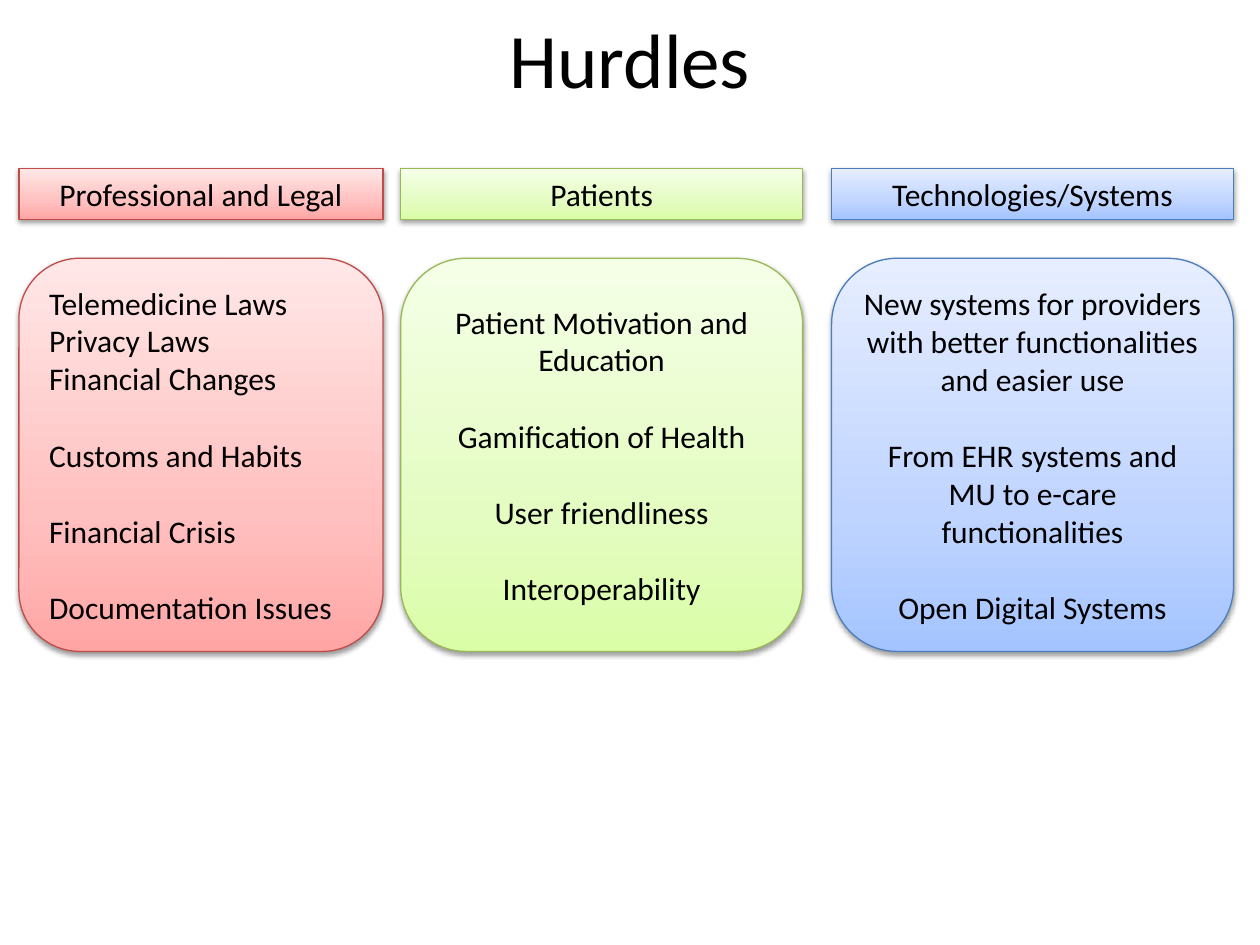
from copy import deepcopy
from dataclasses import dataclass

from lxml import etree
from pptx import Presentation
from pptx.dml.color import RGBColor
from pptx.enum.shapes import MSO_SHAPE
from pptx.enum.text import MSO_ANCHOR, MSO_AUTO_SIZE, PP_ALIGN
from pptx.oxml.ns import qn
from pptx.shapes.autoshape import Shape
from pptx.slide import Slide
from pptx.util import Inches, Pt

FONT = "Calibri"
BLACK = RGBColor(0x00, 0x00, 0x00)
BODY_SIZE = Pt(18)
TOPIC_GAP = Pt(22)
STOP_POSITIONS = (0, 0.35, 1)
HEADER_TOP, HEADER_HEIGHT = 1.34, 0.4
PANEL_TOP, PANEL_HEIGHT = 2.05, 3.12


@dataclass(frozen=True)
class Palette:
    line: RGBColor
    stops: tuple[RGBColor, RGBColor, RGBColor]


@dataclass(frozen=True)
class Column:
    heading: str
    topics: tuple[tuple[str, ...], ...]
    left: float
    width: float
    palette: Palette
    alignment: PP_ALIGN = PP_ALIGN.CENTER


RED = Palette(
    RGBColor(0xBF, 0x4C, 0x48),
    (RGBColor(0xFF, 0xA6, 0xA5), RGBColor(0xFF, 0xC0, 0xBF), RGBColor(0xFF, 0xE7, 0xE7)),
)
GREEN = Palette(
    RGBColor(0x98, 0xB9, 0x55),
    (RGBColor(0xDA, 0xFD, 0xA7), RGBColor(0xE4, 0xFC, 0xC2), RGBColor(0xF5, 0xFF, 0xE7)),
)
BLUE = Palette(
    RGBColor(0x4B, 0x7E, 0xBC),
    (RGBColor(0xA4, 0xC4, 0xFF), RGBColor(0xBF, 0xD4, 0xFF), RGBColor(0xE6, 0xEE, 0xFF)),
)

COLUMNS = (
    Column(
        "Professional and Legal",
        (
            ("Telemedicine Laws", "Privacy Laws", "Financial Changes"),
            ("Customs and Habits",),
            ("Financial Crisis",),
            ("Documentation Issues",),
        ),
        0.15, 2.89, RED, PP_ALIGN.LEFT,
    ),
    Column(
        "Patients",
        (
            ("Patient Motivation and Education",),
            ("Gamification of Health",),
            ("User friendliness",),
            ("Interoperability",),
        ),
        3.18, 3.19, GREEN,
    ),
    Column(
        "Technologies/Systems",
        (
            ("New systems for providers with better functionalities and easier use",),
            ("From EHR systems and MU to e-care functionalities",),
            ("Open Digital Systems",),
        ),
        6.6, 3.19, BLUE,
    ),
)


def apply_gradient(shape: Shape, palette: Palette) -> None:
    shape.fill.gradient()
    shape.fill.gradient_angle = 90
    stop_list = shape.element.spPr.find(f".//{qn('a:gsLst')}")
    stop_list.insert(1, deepcopy(stop_list[0]))
    for stop, position, color in zip(shape.fill.gradient_stops, STOP_POSITIONS, palette.stops):
        stop.position = position
        stop.color.rgb = color


def apply_shadow(shape: Shape) -> None:
    shape.shadow.inherit = False
    effects = shape.element.spPr.find(qn("a:effectLst"))
    shadow = etree.SubElement(
        effects, qn("a:outerShdw"),
        blurRad=str(Pt(3.1)), dist=str(Pt(1.6)), dir="5400000", rotWithShape="0",
    )
    color = etree.SubElement(shadow, qn("a:srgbClr"), val=str(BLACK))
    etree.SubElement(color, qn("a:alpha"), val="38000")


def add_box(slide: Slide, kind: MSO_SHAPE, column: Column, top: float, height: float) -> Shape:
    shape = slide.shapes.add_shape(
        kind, Inches(column.left), Inches(top), Inches(column.width), Inches(height)
    )
    shape.line.color.rgb = column.palette.line
    shape.line.width = Pt(0.75)
    apply_gradient(shape, column.palette)
    apply_shadow(shape)
    shape.text_frame.word_wrap = True
    return shape


def write_topics(shape: Shape, topics: tuple[tuple[str, ...], ...], alignment: PP_ALIGN) -> None:
    frame = shape.text_frame
    for topic_index, topic in enumerate(topics):
        for line_index, line in enumerate(topic):
            is_first = topic_index == line_index == 0
            paragraph = frame.paragraphs[0] if is_first else frame.add_paragraph()
            paragraph.alignment = alignment
            if topic_index and not line_index:
                paragraph.space_before = TOPIC_GAP
            run = paragraph.add_run()
            run.text = line
            run.font.name = FONT
            run.font.size = BODY_SIZE
            run.font.color.rgb = BLACK


def add_column(slide: Slide, column: Column) -> None:
    header = add_box(slide, MSO_SHAPE.RECTANGLE, column, HEADER_TOP, HEADER_HEIGHT)
    header.text_frame.vertical_anchor = MSO_ANCHOR.TOP
    header.text_frame.auto_size = MSO_AUTO_SIZE.SHAPE_TO_FIT_TEXT
    write_topics(header, ((column.heading,),), PP_ALIGN.CENTER)

    panel = add_box(slide, MSO_SHAPE.ROUNDED_RECTANGLE, column, PANEL_TOP, PANEL_HEIGHT)
    panel.text_frame.vertical_anchor = MSO_ANCHOR.MIDDLE
    write_topics(panel, column.topics, column.alignment)


def add_title(slide: Slide, text: str) -> None:
    title = slide.shapes.title
    title.left, title.top = Inches(0.5), Inches(0)
    title.width, title.height = Inches(9), Inches(0.91)
    title.text_frame.vertical_anchor = MSO_ANCHOR.MIDDLE
    paragraph = title.text_frame.paragraphs[0]
    paragraph.alignment = PP_ALIGN.CENTER
    run = paragraph.add_run()
    run.text = text
    run.font.name = FONT
    run.font.size = Pt(44)
    run.font.color.rgb = BLACK


def main() -> None:
    presentation = Presentation()
    presentation.slide_width = Inches(10)
    presentation.slide_height = Inches(7.5)
    slide = presentation.slides.add_slide(presentation.slide_layouts[5])
    add_title(slide, "Hurdles")
    for column in COLUMNS:
        add_column(slide, column)
    presentation.save("out.pptx")


if __name__ == "__main__":
    main()
